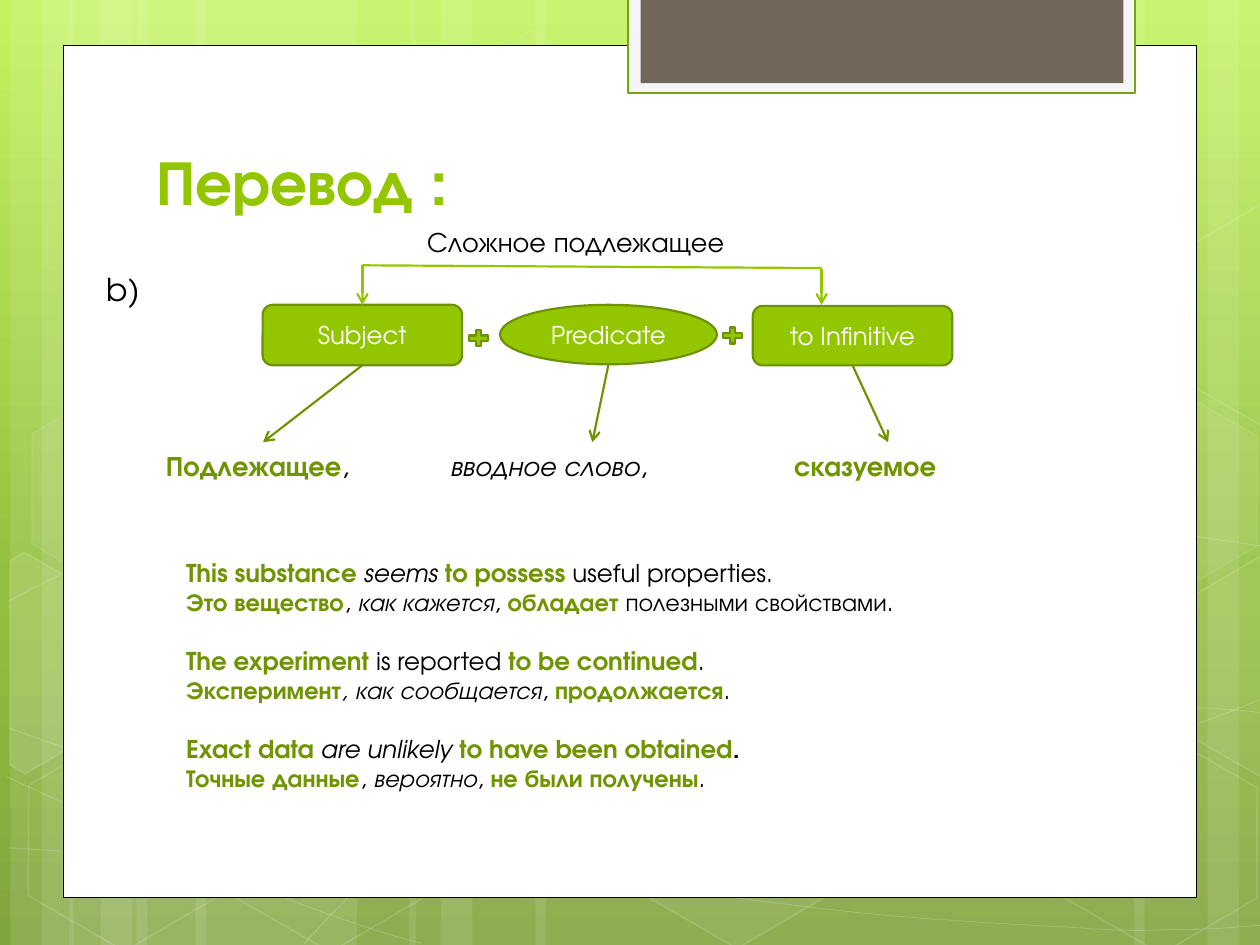
from dataclasses import dataclass
from math import cos, radians, sin
from pptx import Presentation
from pptx.dml.color import RGBColor as RGB
from pptx.enum.shapes import MSO_CONNECTOR as Conn, MSO_SHAPE as Kind
from pptx.enum.text import MSO_ANCHOR as Anchor, PP_ALIGN as Align
from pptx.oxml.ns import qn
from pptx.oxml.xmlchemy import OxmlElement as Elem
from pptx.util import Pt


@dataclass(frozen=True)
class Theme:
    font: str = "TeX Gyre Adventor"
    white: str = "FFFFFF"
    black: str = "000000"
    lime: str = "94C600"
    edge: str = "6D9200"
    green: str = "6F9400"
    frame: str = "74A510"
    pale: str = "F5F5F5"
    brown: str = "71685A"
    sky: tuple = ((0, "C3F35F"), (62, "93BF3F"), (100, "81A53E"))
    head: int = 36
    mark: int = 18
    note: int = 16
    body: int = 14
    line: float = 1.25


T = Theme()
STYLES = {
    "plain": dict(color=T.black),
    "key": dict(color=T.green, bold=True),
    "slant": dict(color=T.black, italic=True),
    "strong": dict(color=T.black, bold=True),
    "head": dict(color=T.lime, bold=True),
    "label": dict(color=T.white),
}

BANDS = [(6, 126, 1), (39.6, 126, 1), (234, 222, 1), (726, 126, -1)]

HEXES = [
    (240.5, 26, 4, 8), (358, 424, 6, 12), (8, 425.5, None, 12),
    (10, 224.5, 7, 8), (125.5, 426, None, 12), (542, 326, 10, 12),
    (600.5, 427, None, 12), (600.5, 226, 7, 8),
]

RIGHT_CUT = [(-42.5, -25.2), (11.5, -56.9), (17.5, -53.3), (17.3, 67), (12.3, 69.8), (-42.5, 38.2)]
LEFT_CUT = [(-20.2, -64.8), (-12.2, -69.8), (43.2, -38.2), (42.5, 25.2), (-11.5, 56.9), (-20.2, 51.8)]
CUT_HEXES = [
    (25.9, 385.2, LEFT_CUT, 10), (709.2, 374.4, RIGHT_CUT, 4), (709.2, 173.5, RIGHT_CUT, None),
]

WAVES = [
    [(5, 484.5), (44, 487, 83, 489, 137, 488), (191, 487, 258, 486, 330, 479),
     (402, 472, 504, 458, 570, 444), (636, 431, 703, 409, 725, 397)],
    [(5, 343.5), (26, 332, 47, 321, 87, 310), (128, 300, 186, 284, 250, 279),
     (314, 274, 392, 273, 471, 279), (550, 284, 682, 307, 725, 312.5)],
    [(4, 444), (91, 484, 178, 523, 240.5, 539)],
    [(5, 416), (27, 424, 50, 432, 92, 443.5), (134, 454, 197, 472, 257, 484.5),
     (317, 497, 392, 510, 452, 517), (512, 525, 576, 528, 614, 530),
     (652, 533, 662, 531, 680, 531), (699, 531, 712, 529, 725, 528.5)],
    [(174, 539), (187, 525, 200, 510, 217.5, 497.5), (235, 485, 259, 470, 279, 460),
     (299.5, 450, 312, 446, 338, 438.5), (364, 431, 413, 421, 438, 416),
     (464, 411, 467, 411, 490, 409.5), (512, 407.5, 547, 405, 572, 404.5),
     (597, 404, 638, 404.5, 638, 404.5), (686, 404.5),
     (699, 405, 711, 406, 718, 407), (724, 407.5, 722, 407, 724.5, 407.5)],
]

PAIRS = [
    ([("This substance ", "key"), ("seems ", "slant"), ("to possess ", "key"),
      ("useful properties.", "plain")],
     [("Это вещество", "key"), (", ", "plain"), ("как кажется", "slant"),
      (",", "plain"), (" обладает ", "key"), ("полезными свойствами.", "plain")]),
    ([("The experiment ", "key"), ("is reported ", "plain"),
      ("to be continued", "key"), (".", "plain")],
     [("Эксперимент", "key"), (", как сообщается", "slant"), (", ", "plain"),
      ("продолжается", "key"), (".", "plain")]),
    ([("Exact data ", "key"), ("are unlikely ", "slant"),
      ("to have been obtained", "key"), (".", "strong")],
     [("Точные данные", "key"), (", ", "plain"), ("вероятно", "slant"),
      (", ", "plain"), ("не были получены", "key"), (".", "plain")]),
]


def paint(fill, color, alpha=None):
    if color is None:
        fill.background()
        return
    fill.solid()
    fill.fore_color.rgb = RGB.from_string(color)
    if alpha is not None:
        tint = Elem("a:alpha")
        tint.set("val", str(alpha * 1000))
        fill._xPr.find(".//" + qn("a:srgbClr")).append(tint)


def dress(item, fill=None, line=None, width=T.line, see=None, clear=None):
    item.shadow.inherit = False
    paint(item.fill, fill, see)
    paint(item.line.fill, line, clear)
    if line:
        item.line.width = Pt(width)
    return item


def shape(page, kind, box, **look):
    return dress(page.shapes.add_shape(kind, *map(Pt, box)), **look)


def outline(page, points, close, **look):
    pen = page.shapes.build_freeform(*map(Pt, points[0]), scale=1.0)
    pen.add_line_segments([tuple(map(Pt, p)) for p in points[1:]], close=close)
    return dress(pen.convert_to_shape(), **look)


def wave(page, route):
    points = [p for part in route for p in zip(part[::2], part[1::2])]
    item = outline(page, points, False, line=T.white, width=0.5, clear=20)
    steps = iter(item._element.findall(".//" + qn("a:lnTo")))
    for part in route[1:]:
        if len(part) == 2:
            next(steps)
            continue
        trio = [next(steps) for _ in range(3)]
        bend = Elem("a:cubicBezTo")
        trio[0].addprevious(bend)
        for step in trio:
            bend.append(step[0])
            step.getparent().remove(step)


def cut_hex(page, left, top, points, see):
    co, si = cos(radians(30)), sin(radians(30))
    turned = [(left + x * co + y * si, top - x * si + y * co) for x, y in points]
    item = outline(page, turned, True, fill=see and T.white, see=see,
                   line=T.white, width=1, clear=12)
    item.rotation = 30


def write(para, runs, size):
    for text, style in runs:
        run = para.add_run()
        run.text = text
        form = dict(name=T.font, size=Pt(size), bold=False, italic=False) | STYLES[style]
        run.font.color.rgb = RGB.from_string(form.pop("color"))
        for key, val in form.items():
            setattr(run.font, key, val)


def label(page, box, runs, size, anchor=Anchor.TOP):
    frame = page.shapes.add_textbox(*map(Pt, box)).text_frame
    frame.word_wrap = True
    frame.vertical_anchor = anchor
    write(frame.paragraphs[0], runs, size)
    return frame


def node(page, kind, box, text):
    item = shape(page, kind, box, fill=T.lime, line=T.edge)
    frame = item.text_frame
    frame.vertical_anchor = Anchor.MIDDLE
    frame.paragraphs[0].alignment = Align.CENTER
    write(frame.paragraphs[0], [(text, "label")], T.body)
    return item


def link(page, start, end, color, arrow=True):
    wire = page.shapes.add_connector(Conn.STRAIGHT, *map(Pt, start + end))
    wire.line.color.rgb = RGB.from_string(color)
    wire.line.width = Pt(T.line)
    if arrow:
        tip = Elem("a:tailEnd")
        tip.set("type", "arrow")
        wire.line._get_or_add_ln().append(tip)
    wire._element.spPr.append(Elem("a:effectLst"))
    return wire


def set_tabs(para, stops):
    tabs = Elem("a:tabLst")
    for stop in stops:
        tab = Elem("a:tab")
        tab.set("pos", str(Pt(stop)))
        tab.set("algn", "l")
        tabs.append(tab)
    para._p.get_or_add_pPr().append(tabs)


def backdrop(page):
    fill = page.background.fill
    fill.gradient()
    fill.gradient_angle = 270
    stops = page._element.find(".//" + qn("a:gsLst"))
    for old in list(stops):
        stops.remove(old)
    for pos, color in T.sky:
        stop, tone = Elem("a:gs"), Elem("a:srgbClr")
        stop.set("pos", str(pos * 1000))
        tone.set("val", color)
        stop.append(tone)
        stops.append(stop)
    for base, wide, way in BANDS:
        for gap, width in ((72, wide), (0, 36), (18, 60)):
            left = base + gap if way > 0 else base - gap - width
            band = shape(page, Kind.RECTANGLE, (left, 0, width, 540), fill=T.white, see=10)
            band.rotation = 0 if way > 0 else 180
    for route in WAVES:
        wave(page, route)
    for left, top, see, clear in HEXES:
        item = shape(page, Kind.HEXAGON, (left, top, 126, 109.5), fill=see and T.white,
                     see=see, line=T.white, width=1, clear=clear)
        item.rotation = 30
        item.adjustments[0], item.adjustments[1] = 0.285, 1.155
    for part in CUT_HEXES:
        cut_hex(page, *part)
    shape(page, Kind.RECTANGLE, (36, 26, 648, 487), fill=T.white, line=T.black, width=0.5)
    shape(page, Kind.RECTANGLE, (359, -1.5, 289.5, 54.5), fill=T.pale, line=T.frame)
    shape(page, Kind.RECTANGLE, (366, -1.5, 276, 49), fill=T.brown)


def scheme(page):
    node(page, Kind.OVAL, (285.7, 174.2, 124, 34), "Predicate")
    subject = node(page, Kind.ROUNDED_RECTANGLE, (150.1, 174.2, 114, 34.5), "Subject")
    verb = node(page, Kind.ROUNDED_RECTANGLE, (430.2, 174.8, 114, 34), "to Infinitive")
    link(page, (207.1, 151.6), (469.5, 153.2), T.lime, arrow=False)
    link(page, (207.1, 151.6), (207.1, 174.2), T.lime).end_connect(subject, 0)
    link(page, (469.5, 153.8), (469.5, 174.2), T.lime)
    for left, top in ((265.8, 187), (411, 185.5)):
        shape(page, Kind.MATH_PLUS, (left, top, 15, 12.5), fill=T.lime, line=T.edge)
    link(page, (207.1, 208.7), (150.3, 252.7), T.green).begin_connect(subject, 2)
    link(page, (487.2, 208.8), (507.5, 252.7), T.green).begin_connect(verb, 2)
    link(page, (347.7, 208.2), (338.5, 252.7), T.green)


def main():
    deck = Presentation()
    deck.slide_width, deck.slide_height = Pt(720), Pt(540)
    page = deck.slides.add_slide(deck.slide_layouts[6])
    backdrop(page)
    label(page, (82.4, 80.5, 553, 47.5), [("Перевод :", "head")], T.head, Anchor.BOTTOM)
    label(page, (54, 151, 34, 29), [("b)", "plain")], T.mark)
    scheme(page)
    roles = label(page, (87.8, 252.7, 521, 26.5),
                  [("Подлежащее", "key"), (",\t", "plain"), ("вводное слово", "slant"),
                   (",\t", "plain"), ("сказуемое", "key")], T.note)
    set_tabs(roles.paragraphs[0], (162.2, 359))
    first, *rest = [line for pair in PAIRS for line in pair]
    frame = label(page, (99.3, 315.3, 510.5, 143.3), first, T.body)
    for n, runs in enumerate(rest, 1):
        para = frame.add_paragraph()
        para.space_before = Pt(0 if n % 2 else 16.7)
        write(para, runs, T.body)
    label(page, (237, 125, 203, 26.5), [("Сложное подлежащее", "plain")], T.note)
    deck.save("out.pptx")


if __name__ == "__main__":
    main()
